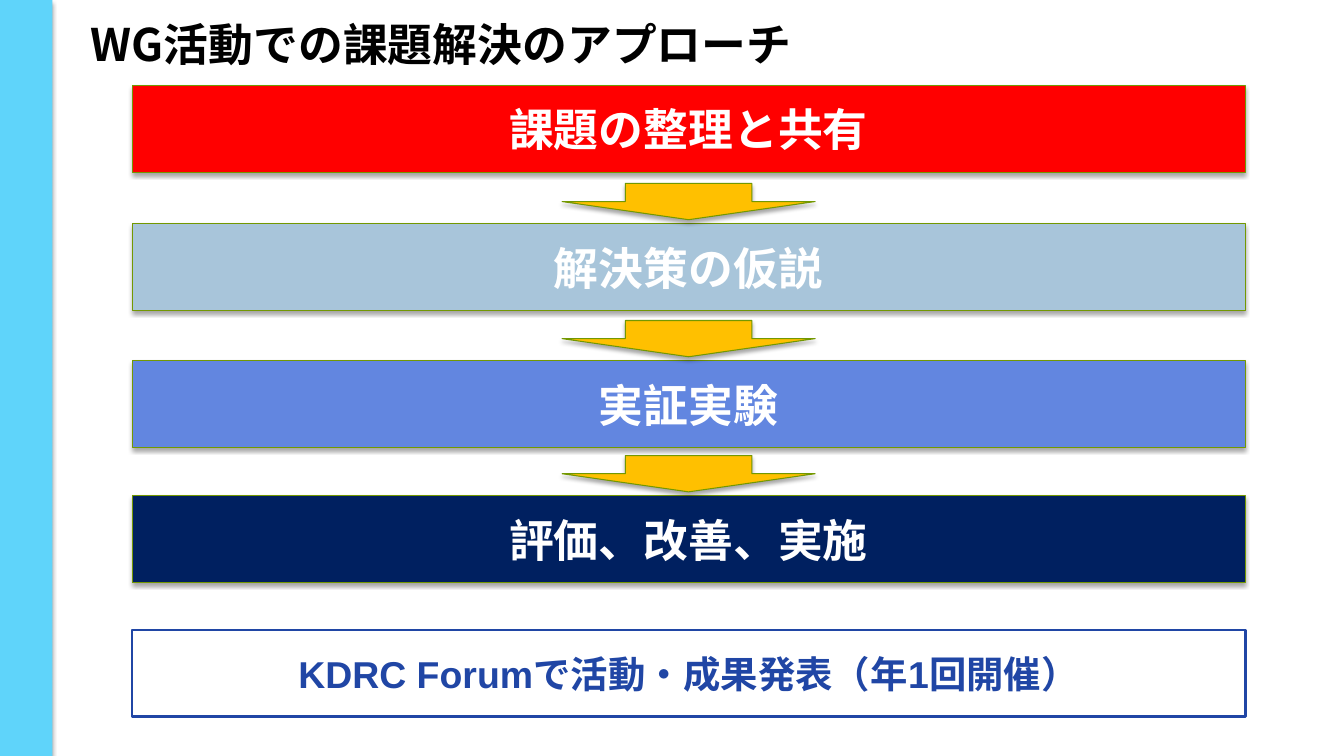
from lxml.etree import SubElement as Sub
from pptx import Presentation
from pptx.dml.color import RGBColor as RGB
from pptx.enum.shapes import MSO_SHAPE as Kind
from pptx.enum.text import MSO_ANCHOR as Anchor, PP_ALIGN as Align
from pptx.oxml.ns import qn
from pptx.util import Inches, Pt

BLACK = RGB(0, 0, 0)
WHITE = RGB(255, 255, 255)
SKY = RGB(0x5F, 0xD4, 0xFA)
RED = RGB(255, 0, 0)
MIST = RGB(0xA8, 0xC5, 0xDA)
BLUE = RGB(0x62, 0x86, 0xE0)
NAVY = RGB(0, 0x20, 0x60)
GOLD = RGB(0xFF, 0xC0, 0)
GREEN = RGB(0x73, 0x98, 0x01)
ROYAL = RGB(0x20, 0x46, 0xA5)

TITLE = "WG活動での課題解決のアプローチ"
STEPS = [
    ("課題の整理と共有", RED, 0.85),
    ("解決策の仮説", MIST, 2.22),
    ("実証実験", BLUE, 3.58),
    ("評価、改善、実施", NAVY, 4.92),
]
FORUM = "KDRC Forumで活動・成果発表（年1回開催）"
ASIAN = "Noto Sans CJK JP"
HEAD = {"name": ASIAN, "size": Pt(32), "bold": True}
STEP = {"name": "Lato", "size": Pt(32), "bold": True}
NOTE = {"name": "Arial", "size": Pt(26.7), "bold": True}

WIDE, HIGH = 13.33, 7.5
LEFT, SPAN, TALL = 1.31, 11.04, 0.86
TIP_W, TIP_H, RISE = 2.51, 0.36, 0.4
TIP_X = LEFT + (SPAN - TIP_W) / 2


def write(shape, text, look, color, align):
    frame = shape.text_frame
    frame.word_wrap = True
    frame.vertical_anchor = Anchor.MIDDLE
    para = frame.paragraphs[0]
    para.alignment = align
    run = para.add_run()
    run.text = text
    for key, value in look.items():
        setattr(run.font, key, value)
    run.font.color.rgb = color
    Sub(run.font._element, qn("a:ea"), typeface=ASIAN)


def draw(kind, box, fill, line=None, width=0.75, shade=True):
    shape = slide.shapes.add_shape(kind, *map(Inches, box))
    shape.fill.solid()
    shape.fill.fore_color.rgb = fill
    if line is None:
        shape.line.fill.background()
    else:
        shape.line.color.rgb = line
        shape.line.width = Pt(width)
    shape.shadow.inherit = False
    if shade:
        cast = Sub(shape._element.spPr.find(qn("a:effectLst")), qn("a:outerShdw"),
                   blurRad=str(Pt(3.1)), dist=str(Pt(1.8)), dir="5400000", rotWithShape="0")
        tint = Sub(cast, qn("a:srgbClr"), val=str(BLACK))
        Sub(tint, qn("a:alpha"), val="35000")
    return shape


deck = Presentation()
deck.slide_width, deck.slide_height = Inches(WIDE), Inches(HIGH)
slide = deck.slides.add_slide(deck.slide_layouts[5])

title = slide.shapes.title
place = {"left": 0.8, "top": 0.14, "width": 12.32, "height": 0.58}
for key, value in place.items():
    setattr(title, key, Inches(value))
write(title, TITLE, HEAD, BLACK, Align.LEFT)

draw(Kind.RECTANGLE, (0, 0, 0.52, HIGH), SKY)
for rank, (text, fill, top) in enumerate(STEPS):
    bar = draw(Kind.RECTANGLE, (LEFT, top, SPAN, TALL), fill, GREEN)
    write(bar, text, STEP, WHITE, Align.CENTER)
    if rank:
        draw(Kind.DOWN_ARROW, (TIP_X, top - RISE, TIP_W, TIP_H), GOLD, GREEN)

forum = draw(Kind.RECTANGLE, (LEFT, 6.25, SPAN, TALL), WHITE, ROYAL, 2, False)
write(forum, FORUM, NOTE, ROYAL, Align.CENTER)

deck.save("out.pptx")
